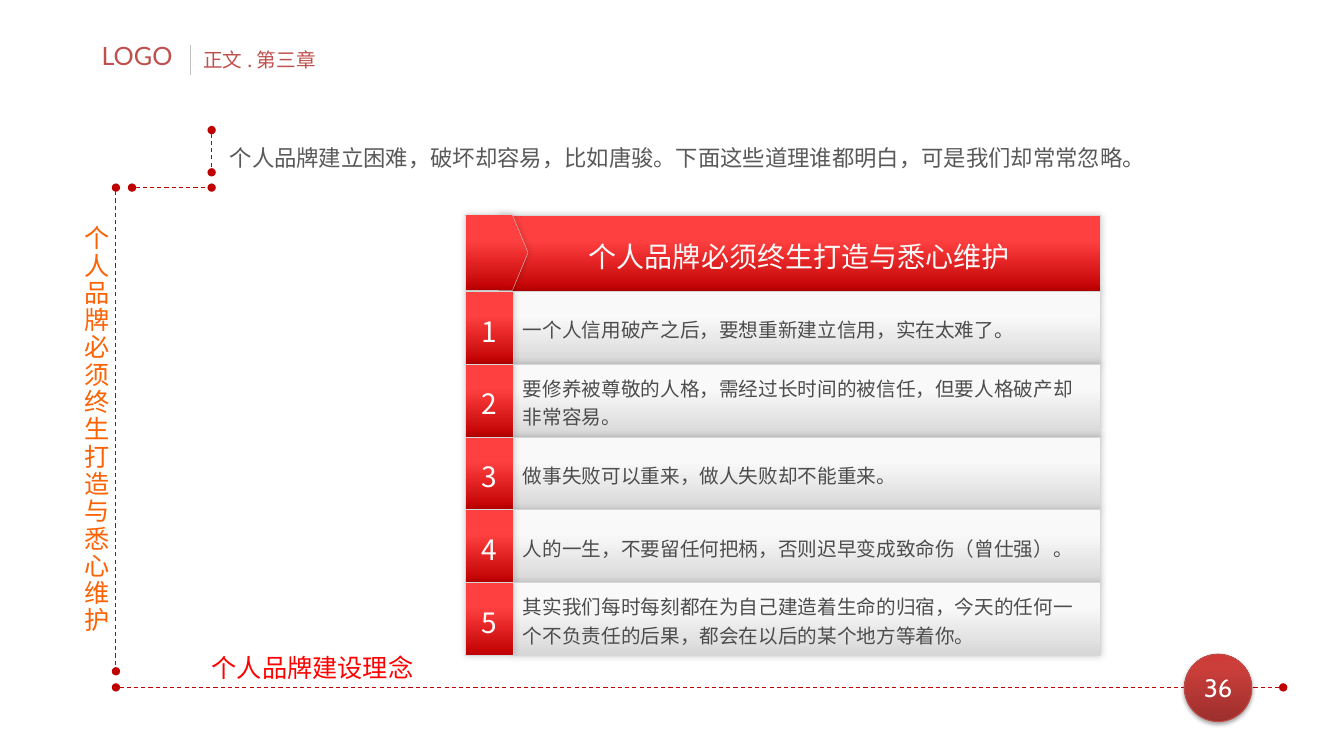
from dataclasses import dataclass, field
from typing import Any

from lxml import etree
from pptx import Presentation
from pptx import util as u
from pptx.dml.color import RGBColor
from pptx.enum import dml, shapes, text
from pptx.oxml.ns import qn

CJK = "Noto Sans CJK SC"
SLOGAN = "个人品牌必须终生打造与悉心维护"
INSETS = (7.2, 3.6, 7.2, 3.6)
MID, CENTER = text.MSO_ANCHOR.MIDDLE, text.PP_ALIGN.CENTER
RED = ((33, "FF4040"), (100, "C00000"))
GREY = ((33, "F9F9F9"), (100, "D7D7D7"))
BALL = ((0, "9C2F2D"), (80, "CB3E3A"), (100, "CE3B37"))


@dataclass
class Shadow:
    alpha: int = 20
    blur: float = 5
    dist: float = 0
    direction: int = 0


@dataclass
class Label:
    words: str
    size: float
    color: str
    font: str = CJK
    paragraph: dict[str, Any] = field(default_factory=dict)
    frame: dict[str, Any] = field(default_factory=dict)
    insets: tuple = INSETS
    vertical: bool = False


@dataclass
class Panel:
    box: tuple
    stops: tuple
    label: Label | None = None
    kind: Any = shapes.MSO_SHAPE.RECTANGLE
    angle: int = 270
    line: tuple = ("D7D7D7", 0.25)
    shadow: Shadow = field(default_factory=Shadow)


@dataclass
class Rule:
    start: tuple
    end: tuple
    color: str = "C00000"
    dotted: bool = True


def rgb(color: str) -> RGBColor:
    return RGBColor.from_string(color)


def pts(values: tuple) -> list:
    return [u.Pt(v) for v in values]


def sub(parent: Any, tag: str, **attrs: Any) -> Any:
    return etree.SubElement(parent, qn(tag), {k: str(v) for k, v in attrs.items()})


def apply(target: Any, values: dict[str, Any]) -> None:
    for name, value in values.items():
        setattr(target, name, value)


def write(sp: Any, label: Label) -> None:
    tf = sp.text_frame
    sides = ("margin_left", "margin_top", "margin_right", "margin_bottom")
    apply(tf, {"word_wrap": True, **label.frame, **dict(zip(sides, pts(label.insets)))})
    p = tf.paragraphs[0]
    apply(p, {"alignment": text.PP_ALIGN.LEFT, **label.paragraph})
    r = p.add_run()
    r.text = label.words
    apply(r.font, {"size": u.Pt(label.size), "name": label.font})
    r.font.color.rgb = rgb(label.color)
    rpr = r.font._element
    sub(rpr, "a:ea", typeface=label.font)
    if label.vertical:
        rpr.set("spc", "150")
        sp.element.txBody.bodyPr.set("vert", "eaVert")


def add_label(slide: Any, box: tuple, label: Label) -> None:
    write(slide.shapes.add_textbox(*pts(box)), label)


def add_panel(slide: Any, panel: Panel) -> None:
    sp = slide.shapes.add_shape(panel.kind, *pts(panel.box))
    if panel.kind == shapes.MSO_SHAPE.PENTAGON:
        sp.adjustments[0] = 0.25
    sp.fill.gradient()
    sp.fill.gradient_angle = panel.angle
    stops = sp.element.spPr.find(".//" + qn("a:gsLst"))
    for old in list(stops):
        stops.remove(old)
    for pos, color in panel.stops:
        sub(sub(stops, "a:gs", pos=pos * 1000), "a:srgbClr", val=color)
    color, width = panel.line
    sp.line.color.rgb = rgb(color)
    sp.line.width = u.Pt(width)
    sp.shadow.inherit = False
    shadow = panel.shadow
    outer = sub(sp.element.spPr.find(qn("a:effectLst")), "a:outerShdw",
                blurRad=int(u.Pt(shadow.blur)), dist=int(u.Pt(shadow.dist)),
                dir=shadow.direction * 60000, algn="ctr", rotWithShape=0)
    sub(sub(outer, "a:srgbClr", val="000000"), "a:alpha", val=shadow.alpha * 1000)
    if panel.label:
        write(sp, panel.label)


def add_rule(slide: Any, rule: Rule) -> None:
    line = slide.shapes.add_connector(
        shapes.MSO_CONNECTOR.STRAIGHT, *pts(rule.start + rule.end))
    line.line.color.rgb = rgb(rule.color)
    line.line.width = u.Pt(0.75)
    spPr = line.element.spPr
    if rule.dotted:
        line.line.dash_style = dml.MSO_LINE.DASH
        for end in ("a:headEnd", "a:tailEnd"):
            sub(spPr.find(qn("a:ln")), end, type="oval")
    sub(spPr, "a:effectLst")


def main() -> None:
    prs = Presentation()
    prs.slide_width, prs.slide_height = u.Pt(960), u.Pt(540)
    slide = prs.slides.add_slide(prs.slide_layouts[6])
    grow = {"auto_size": text.MSO_AUTO_SIZE.SHAPE_TO_FIT_TEXT}
    middle = {"vertical_anchor": MID}
    spaced = {"line_spacing": 1.2}
    centered = {"alignment": CENTER, **spaced}

    add_label(slide, (151.2, 462.2, 278, 29),
              Label("个人品牌建设理念", 18, "FF0000", frame=grow, insets=(0, 3.6, 7.2, 3.6)))
    add_rule(slide, Rule((136, 32.4), (136, 53.3), "BFBFBF", False))
    add_label(slide, (138.2, 31.7, 522.7, 22.3),
              Label("正文 . 第三章", 14, "C0504D", frame=middle))
    add_label(slide, (65.5, 25.2, 70.6, 29), Label("LOGO", 18, "C0504D", "Lato", frame=grow))
    add_rule(slide, Rule((82.8, 491), (916.6, 491)))
    add_panel(slide, Panel(
        (846, 467.3, 48.2, 48.2), BALL,
        Label("36", 18, "FFFFFF", "Cabin", {"alignment": CENTER}, middle, (0.7, 0, 0.7, 0)),
        shapes.MSO_SHAPE.OVAL, 90, ("BF4C48", 0.75), Shadow(35, 3.1, 1.8, 90)))

    add_label(slide, (46.8, 154, 36, 342),
              Label(SLOGAN, 18, "FC6204", paragraph={"alignment": CENTER}, frame=grow,
                    vertical=True))
    add_label(slide, (157, 92.9, 753.8, 33.1),
              Label("个人品牌建立困难，破坏却容易，比如唐骏。下面这些道理谁都明白，可是我们却常常忽略。",
                    16, "595959", paragraph={"line_spacing": 1.35}, frame=grow))
    for rule in (Rule((82.8, 134), (82.8, 479.5)),
                 Rule((94.3, 134), (151.2, 134)),
                 Rule((151.2, 92.9), (151.2, 123.1))):
        add_rule(slide, rule)

    left, split, right = 332.6, 366.5, 786.2
    top, row_top, pitch = 153.4, 208, 52
    add_panel(slide, Panel((355.7, top, right - 355.7, 54.7), RED,
                           Label(SLOGAN, 20, "F9F9F9", paragraph=centered, frame=middle)))
    add_panel(slide, Panel((left, top, 44.6, 54), RED, kind=shapes.MSO_SHAPE.PENTAGON))
    truths = (
        "一个人信用破产之后，要想重新建立信用，实在太难了。",
        "要修养被尊敬的人格，需经过长时间的被信任，但要人格破产却非常容易。",
        "做事失败可以重来，做人失败却不能重来。",
        "人的一生，不要留任何把柄，否则迟早变成致命伤（曾仕强）。",
        "其实我们每时每刻都在为自己建造着生命的归宿，今天的任何一个不负责任的后果，都会在以后的某个地方等着你。",
    )
    for i, truth in enumerate(truths):
        y = row_top + i * pitch
        add_panel(slide, Panel((split, y, right - split, pitch), GREY,
                               Label(truth, 14, "4D4D4D", paragraph=spaced, frame=middle)))
        add_panel(slide, Panel((left, y, split - left, pitch), RED,
                               Label(str(i + 1), 20, "FFFFFF", paragraph=centered,
                                     frame=middle)))
    prs.save("out.pptx")


if __name__ == "__main__":
    main()
